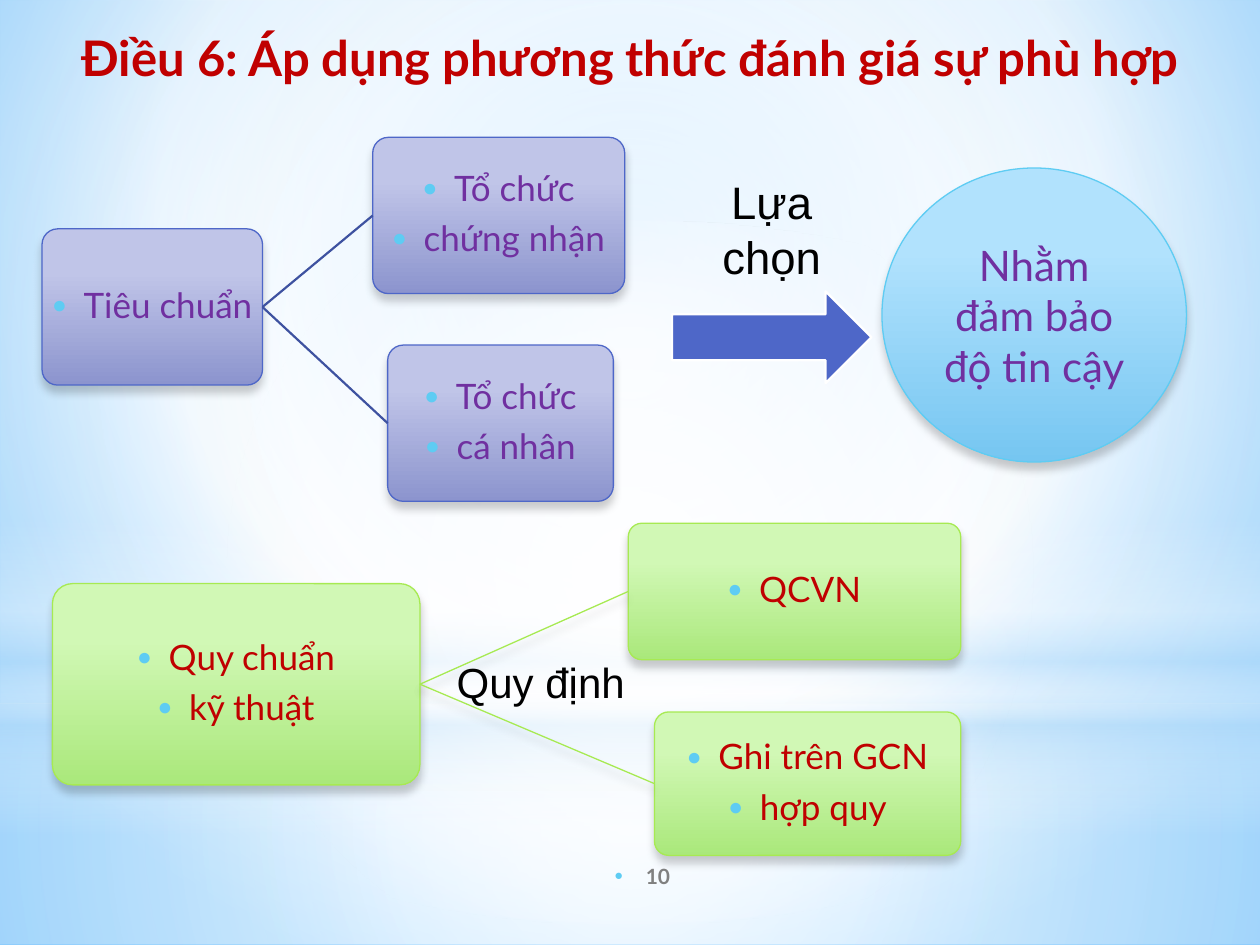
import pptx
import pptx.dml.color
import pptx.enum.shapes
import pptx.enum.text
import pptx.oxml
import pptx.oxml.ns
import pptx.util

Pt = pptx.util.Pt
KIND = pptx.enum.shapes.MSO_SHAPE
MID = pptx.enum.text.MSO_ANCHOR.MIDDLE
TOP = pptx.enum.text.MSO_ANCHOR.TOP
ALIGN = pptx.enum.text.PP_ALIGN.CENTER
NS = pptx.oxml.ns.nsdecls("a")

BLUE = {"fill": [(28, "C0C5E8"), (100, "8C94CE")], "line": "4E67C8",
        "link": ("3E52A0", 1.25, False), "text": "7030A0"}
GREEN = {"fill": [(28, "D1F8B5"), (100, "AAE87B")], "line": "A7EA52",
         "link": ("A7EA52", 0.75, True), "text": "C00000"}


def tint(code):
    """Turn a hex string into a colour."""
    return pptx.dml.color.RGBColor.from_string(code)


def assign(item, vals):
    """Set each named value on an item."""
    for name, val in vals.items():
        setattr(item, name, val)


def span(box):
    """Turn a box in points into lengths."""
    return [Pt(val) for val in box]


def blend(props, stops, focus=None):
    """Swap an empty fill for a gradient, round if a focus is given."""
    parts = "".join(
        f'<a:gs pos="{pos * 1000}"><a:srgbClr val="{code}">'
        f'<a:alpha val="{(rest[0] if rest else 100) * 1000}"/></a:srgbClr></a:gs>'
        for pos, code, *rest in stops)
    if focus:
        sides = " ".join(f'{side}="{val * 1000}"' for side, val in zip("ltrb", focus))
        way = f'<a:path path="circle"><a:fillToRect {sides}/></a:path>'
    else:
        way = '<a:lin ang="5400000" scaled="0"/>'
    fill = pptx.oxml.parse_xml(
        f'<a:gradFill {NS} rotWithShape="1"><a:gsLst>{parts}</a:gsLst>{way}</a:gradFill>')
    props.replace(props.find(pptx.oxml.ns.qn("a:noFill")), fill)


def shade(item, on=True):
    """Give an item a soft shadow below, or none."""
    props = item._element.spPr
    for old in props.findall(pptx.oxml.ns.qn("a:effectLst")):
        props.remove(old)
    drop = (f'<a:outerShdw blurRad="{Pt(5)}" dist="{Pt(4)}" dir="5400000" rotWithShape="0">'
            '<a:srgbClr val="000000"><a:alpha val="20000"/></a:srgbClr></a:outerShdw>')
    props.append(pptx.oxml.parse_xml(
        f'<a:effectLst {NS}>{drop if on else ""}</a:effectLst>'))


def bullet(para, left=18):
    """Add a hanging round bullet to a paragraph."""
    props = para._p.get_or_add_pPr()
    props.set("marL", str(Pt(left)))
    props.set("indent", str(-Pt(18)))
    for part in ('buClr><a:srgbClr val="5ECCF3"/></a:buClr', 'buSzPct val="70000"/',
                 'buFont typeface="Arial"/', 'buChar char="●"/'):
        tag, rest = part[:-1] if part.endswith("/") else part, part.endswith("/")
        if rest:
            node = f"<a:{tag} {NS}/>"
        else:
            node = f"<a:{tag.replace('>', f' {NS}>', 1)}>"
        props.append(pptx.oxml.parse_xml(node))


def write(item, lines, size, code, face="Lato", bold=False, frame=None, para=None):
    """Fill an item with centred lines of text."""
    body = item.text_frame
    assign(body, {"word_wrap": True, "vertical_anchor": MID, **(frame or {})})
    for num, line in enumerate(lines):
        row = body.add_paragraph() if num else body.paragraphs[0]
        assign(row, {"alignment": ALIGN, **(para or {})})
        run = row.add_run()
        run.text = line
        assign(run.font, {"size": Pt(size), "name": face, "bold": bold})
        run.font.color.rgb = tint(code)
    return body.paragraphs


def panel(slide, kind, box, stops, line=None, focus=None):
    """Draw a shape with a gradient, shadowed if it has a line."""
    item = slide.shapes.add_shape(kind, *span(box))
    item.fill.background()
    blend(item._element.spPr, stops, focus)
    if line:
        item.line.color.rgb = tint(line)
        item.line.width = Pt(0.75)
    else:
        item.line.fill.background()
    shade(item, bool(line))
    return item


def scene(slide, box):
    """Paint the sky behind the slide."""
    left, top, wide, high = box
    slide.background.fill.background()
    blend(slide._element.find(".//" + pptx.oxml.ns.qn("p:bgPr")),
          [(0, "9ED5FF"), (60, "FFFFFF"), (100, "5BB9FF")], (20, 10, 20, 60))
    mid = (50, 50, 50, 50)
    for kind, y, tall, focus, stops in (
            (KIND.RECTANGLE, 402, high - 402, mid,
             [(0, "FFFFFF", 91), (37, "FFFFFF", 76), (100, "B4DCFA", 79)]),
            (KIND.RECTANGLE, 0, 402, mid,
             [(0, "FFFFFF", 89), (48, "FFFFFF", 62), (100, "B4DCFA", 79)]),
            (KIND.RECTANGLE, 297, 180, None,
             [(0, "FFFFFF", 0), (29, "FFFFFF", 30), (45, "B4DCFA", 40),
              (55, "FFFFFF", 26), (65, "B4DCFA", 60), (100, "FFFFFF", 0)]),
            (KIND.OVAL, 126, 402, mid, [(0, "FFFFFF"), (56, "FFFFFF", 0)])):
        panel(slide, kind, (left, top + y, wide, tall), stops, focus=focus)


def head(slide, box, text):
    """Place the title above the scene."""
    item = slide.shapes.title
    slide.shapes._spTree.append(item._element)
    assign(item, dict(zip(("left", "top", "width", "height"), span(box))))
    write(item, [text], 28, "C00000", bold=True, frame={"vertical_anchor": TOP})


def tree(slide, box, look, nodes):
    """Draw a root node and link it to its branches."""
    left, top = box[:2]
    cards = []
    for (x, y, wide, high), lines in nodes:
        card = panel(slide, KIND.ROUNDED_RECTANGLE, (left + x, top + y, wide, high),
                     look["fill"], look["line"])
        card.adjustments[0] = 0.1
        edges = {"margin_" + side: Pt(3) for side in ("left", "right", "top", "bottom")}
        for row in write(card, lines, 20, look["text"], frame=edges,
                         para={"line_spacing": 0.9, "space_after": Pt(7)}):
            bullet(row)
        cards.append(card)
    code, width, dark = look["link"]
    root = cards[0]
    for card in cards[1:]:
        link = slide.shapes.add_connector(
            pptx.enum.shapes.MSO_CONNECTOR.STRAIGHT, 0, 0, 0, 0)
        link.begin_connect(root, 3)
        link.end_connect(card, 1)
        link.line.color.rgb = tint(code)
        link.line.width = Pt(width)
        shade(link, dark)


def label(slide, box, text, size, code="000000", **form):
    """Place a line of free text."""
    item = slide.shapes.add_textbox(*span(box))
    return write(item, [text], size, code, **form)


def goal(slide, box):
    """Draw the choice arrow and the aim it leads to."""
    left, top, wide, high = box
    label(slide, (left, top, 114, 70), "Lựa chọn", 26, face="Arial",
          frame={"vertical_anchor": TOP}, para={"space_before": Pt(5)})
    arrow = slide.shapes.add_shape(KIND.RIGHT_ARROW, *span((left, top + 70.5, 114, 52.5)))
    arrow.fill.solid()
    arrow.fill.fore_color.rgb = tint("4E67C8")
    arrow.line.color.rgb = tint("FFFFFF")
    arrow.line.width = Pt(1.25)
    shade(arrow, False)
    aim = panel(slide, KIND.OVAL, (left + wide - 174, top, 174, high),
                [(28, "B1E2FD"), (100, "76C6F1")], "5ECCF3")
    write(aim, ["Nhằm đảm bảo độ tin cậy"], 24, "7030A0", para={"space_before": Pt(5)})


def main():
    """Build and save the slide."""
    deck = pptx.Presentation()
    assign(deck, {"slide_width": Pt(720), "slide_height": Pt(540)})
    slide = deck.slides.add_slide(deck.slide_layouts[5])
    scene(slide, (0, 0, 720, 540))
    rows = label(slide, (300, 486, 144, 29), "10", 12, "808080", bold=True)
    bullet(rows[0], 8)
    head(slide, (6, 12, 708, 48), "Điều 6: Áp dụng phương thức đánh giá sự phù hợp")
    tree(slide, (24, 78.5, 333, 208), BLUE, [
        ((0, 52.3, 126, 89.3), ["Tiêu chuẩn"]),
        ((189, 0, 144, 89.3), ["Tổ chức", "chứng nhận"]),
        ((197.5, 118.7, 129, 89.3), ["Tổ chức", "cá nhân"])])
    goal(slide, (384, 96, 294, 168))
    label(slide, (252, 371.5, 114, 36), "Quy định", 24, face="Arial",
          frame={"vertical_anchor": TOP}, para={"space_before": Pt(5)})
    tree(slide, (30, 299, 519, 190), GREEN, [
        ((0, 34.5, 210, 115), ["Quy chuẩn", "kỹ thuật"]),
        ((329, 0, 190, 78), ["QCVN"]),
        ((344, 107.8, 175, 82), ["Ghi trên GCN", "hợp quy"])])
    deck.save("out.pptx")


if __name__ == "__main__":
    main()
